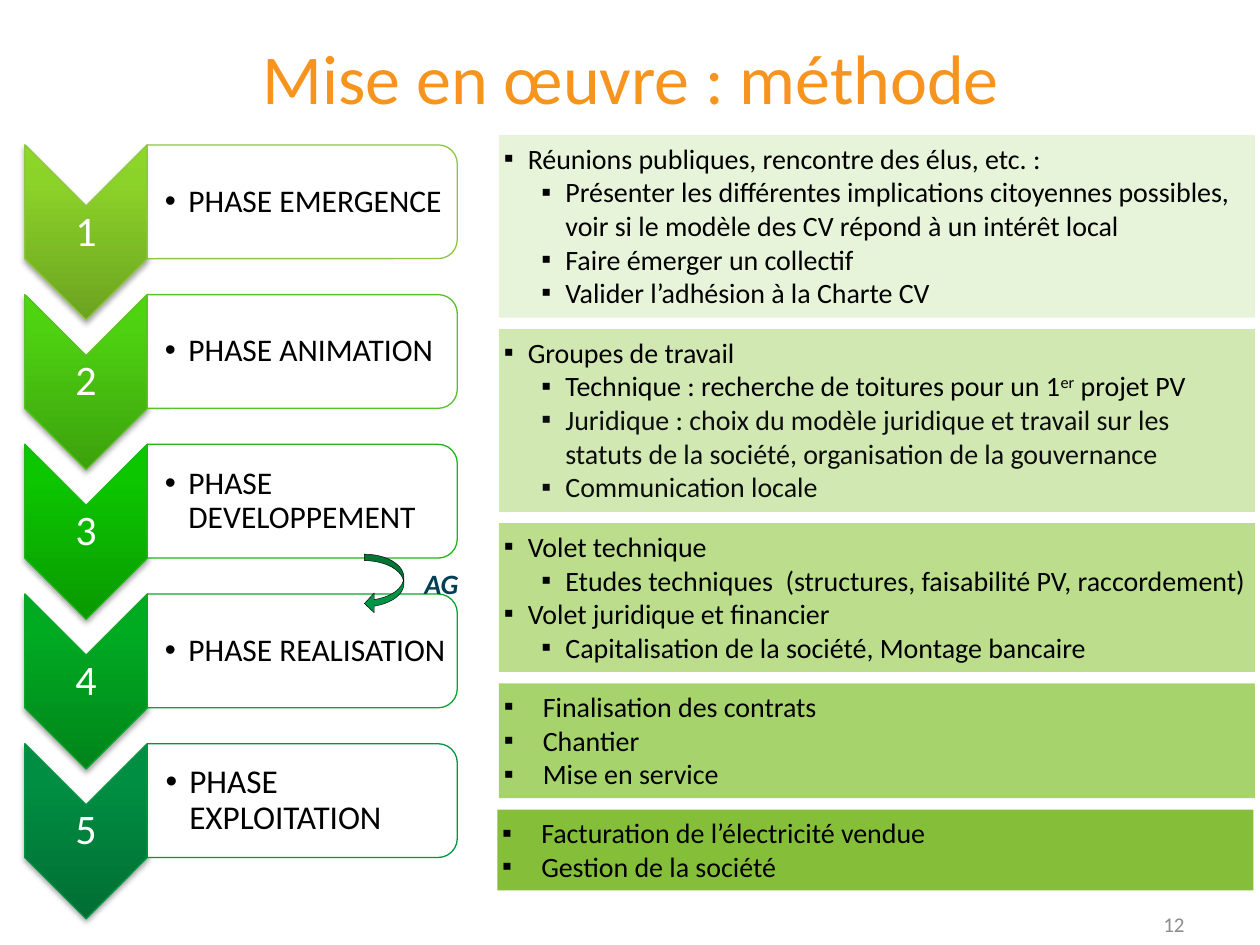
from lxml import etree
from pptx import Presentation
from pptx.dml.color import RGBColor
from pptx.enum.shapes import MSO_SHAPE as Kind
from pptx.enum.text import MSO_ANCHOR as Anchor, MSO_AUTO_SIZE as Fit, PP_ALIGN as Align
from pptx.oxml import parse_xml
from pptx.oxml.ns import qn
from pptx.util import Pt

NS = 'xmlns:a="http://schemas.openxmlformats.org/drawingml/2006/main"'

# Number colour line, gradient from dark to light, label, label size
PHASES = [
    ("8DC63F", ("6CA320", "8CD329", "8DD826"), "PHASE EMERGENCE", 18),
    ("59C128", ("3CA10D", "4ED111", "4DD60D"), "PHASE ANIMATION", 18),
    ("21B517", ("099900", "0CC600", "0CC700"), "PHASE DEVELOPPEMENT", 18),
    ("0AA629", ("00841A", "00AB22", "00AC22"), "PHASE REALISATION", 18),
    ("009444", ("006E33", "008F42", "009042"), "PHASE EXPLOITATION", 19),
]

# Left, fill, lines of text, first indent, items (level, text, colour)
BLACK, DARK = "000000", "0D0D0D"
PANELS = [
    (285.1, "E8F4D9", 5, 13.7, [
        (0, "Réunions publiques, rencontre des élus, etc. :", BLACK),
        (1, "Présenter les différentes implications citoyennes possibles, "
            "voir si le modèle des CV répond à un intérêt local", BLACK),
        (1, "Faire émerger un collectif", BLACK),
        (1, "Valider l’adhésion à la Charte CV", BLACK)]),
    (285.1, "D1E8B2", 5, 13.7, [
        (0, "Groupes de travail", BLACK),
        (1, "Technique : recherche de toitures pour un 1^er^ projet PV", BLACK),
        (1, "Juridique : choix du modèle juridique et travail sur les "
            "statuts de la société, organisation de la gouvernance", DARK),
        (1, "Communication locale", DARK)]),
    (285.1, "BBDD8C", 4, 13.7, [
        (0, "Volet technique", BLACK),
        (1, "Etudes techniques  (structures, faisabilité PV, raccordement)", BLACK),
        (0, "Volet juridique et financier", BLACK),
        (1, "Capitalisation de la société, Montage bancaire", BLACK)]),
    (285.1, "A6D36B", 3, 22.3, [
        (0, "Finalisation des contrats", BLACK),
        (0, "Chantier", BLACK),
        (0, "Mise en service", BLACK)]),
    (284.2, "85BE38", 2, 22.3, [
        (0, "Facturation de l’électricité vendue", BLACK),
        (0, "Gestion de la société", BLACK)]),
]


def rgb(code):
    return RGBColor.from_string(code)


class Deck:
    font = "Calibri"

    def __init__(self, wide, high):
        self.prs = Presentation()
        self.prs.slide_width, self.prs.slide_height = Pt(wide), Pt(high)
        self.slide = self.prs.slides.add_slide(self.prs.slide_layouts[5])

    def style(self, par, size, color, bold=False, italic=False):
        for run in par.runs:
            font = run.font
            font.name, font.size = self.font, Pt(size)
            font.bold, font.italic = bold, italic
            font.color.rgb = rgb(color)

    def title(self, text, box, size, color):
        shape = self.slide.shapes.title
        shape.left, shape.top, shape.width, shape.height = map(Pt, box)
        frame = shape.text_frame
        frame.text = text
        frame.vertical_anchor = Anchor.MIDDLE
        frame.paragraphs[0].alignment = Align.CENTER
        self.style(frame.paragraphs[0], size, color)

    def shape(self, kind, box, fill=None, line=None, width=0.75, turn=0):
        shape = self.slide.shapes.add_shape(kind, *map(Pt, box))
        shape.shadow.inherit = False
        shape.rotation = turn
        if fill:
            shape.fill.solid()
            shape.fill.fore_color.rgb = rgb(fill)
        if line:
            shape.line.color.rgb = rgb(line)
            shape.line.width = Pt(width)
        else:
            shape.line.fill.background()
        return shape

    def fade(self, shape, percent):
        color = shape.fill._xPr.find(qn("a:solidFill"))[0]
        etree.SubElement(color, qn("a:alpha")).set("val", str(percent * 1000))

    def shade(self, shape, colors):
        """Vertical gradient, dark at the bottom, with a soft shadow."""
        stops = "".join(
            f'<a:gs pos="{pos}000"><a:srgbClr val="{color}"/></a:gs>'
            for pos, color in zip((0, 80, 100), colors))
        props = shape._element.spPr
        props.find(qn("a:prstGeom")).addnext(parse_xml(
            f'<a:gradFill {NS} rotWithShape="0"><a:gsLst>{stops}</a:gsLst>'
            '<a:lin ang="16200000" scaled="0"/></a:gradFill>'))
        props.find(qn("a:effectLst")).append(parse_xml(
            f'<a:outerShdw {NS} blurRad="{Pt(3.1)}" dist="{Pt(1.8)}" dir="5400000" '
            'rotWithShape="0"><a:srgbClr val="000000"><a:alpha val="35000"/>'
            '</a:srgbClr></a:outerShdw>'))

    def pad(self, frame, left, top, right, low):
        frame.margin_left, frame.margin_top = Pt(left), Pt(top)
        frame.margin_right, frame.margin_bottom = Pt(right), Pt(low)

    def text(self, text, box, size, color, align=Align.LEFT,
             anchor=Anchor.MIDDLE, pads=(7.2, 3.6, 7.2, 3.6), **face):
        frame = self.slide.shapes.add_textbox(*map(Pt, box)).text_frame
        frame.word_wrap = True
        frame.vertical_anchor = anchor
        self.pad(frame, *pads)
        frame.text = text
        par = frame.paragraphs[0]
        par.alignment = align
        self.style(par, size, color, **face)
        return par

    def bullet(self, par, sign, left, hang, level=0):
        par.level = level
        props = par._p.get_or_add_pPr()
        props.set("marL", str(Pt(left)))
        props.set("indent", str(-Pt(hang)))
        etree.SubElement(props, qn("a:buFont")).set("typeface", "Arial")
        etree.SubElement(props, qn("a:buChar")).set("char", sign)

    def panel(self, box, fill, first, items):
        frame = self.shape(Kind.RECTANGLE, box, fill).text_frame
        frame.word_wrap = True
        frame.auto_size = Fit.SHAPE_TO_FIT_TEXT
        frame.vertical_anchor = Anchor.TOP
        self.pad(frame, 2.8, 3.6, 2.8, 3.6)
        for i, (level, text, color) in enumerate(items):
            par = frame.add_paragraph() if i else frame.paragraphs[0]
            par.alignment = Align.LEFT
            self.bullet(par, "▪", 35.2 if level else first,
                        13.7 if level else first, level)
            # Parts between carets are raised
            for j, part in enumerate(text.split("^")):
                run = par.add_run()
                run.text = part
                if j % 2:
                    run._r.get_or_add_rPr().set("baseline", "30000")
            self.style(par, 16, color)


def main():
    deck = Deck(720, 540)
    deck.title("Mise en œuvre : méthode", (36.5, 15, 648, 57), 40, "F7941E")

    # Phases: numbered chevron and label box, one row each
    pitch = 85.55
    for i, (line, colors, label, size) in enumerate(PHASES):
        drop = i * pitch
        arrow = deck.shape(Kind.CHEVRON, (-0.9, 97.8 + drop, 100.1, 70),
                           line=line, turn=90)
        deck.shade(arrow, colors)
        deck.text(str(i + 1), (14.1, 117.9 + drop, 70, 30), 24, "FFFFFF",
                  Align.CENTER, pads=(1.2,) * 4).line_spacing = 0.9
        card = deck.shape(Kind.ROUND_2_SAME_RECTANGLE,
                          (140.2, 26.7 + drop, 65, 177.2), "FFFFFF", line, turn=90)
        deck.fade(card, 90)
        par = deck.text(label, (84.1, 86.1 + drop, 174.1, 58.7), size, BLACK,
                        pads=(size * 0.56, 0.9, 0.9, 0.9))
        par.line_spacing = 0.9
        deck.bullet(par, "•", 13.5, 13.5, 1)

    # Detail panels, stacked with an equal gap
    top = 77.2
    for left, fill, lines, first, items in PANELS:
        high = 7.4 + 19.4 * lines
        deck.panel((left, top, 432, high), fill, first, items)
        top += high + 6.5

    # Assembly step between phases 3 and 4
    turn = deck.shape(Kind.CURVED_LEFT_ARROW, (208.2, 316.7, 22.6, 33.9),
                      "009444", BLACK, 0.25)
    for i, value in enumerate((0.164, 0.5, 0.25)):
        turn.adjustments[i] = value
    deck.text("AG", (235.4, 320.4, 51.8, 26.6), 16, "003F54",
              anchor=Anchor.TOP, bold=True, italic=True)

    # Page number
    deck.text("12", (516, 513.5, 168, 28.8), 12, "8C8C8C", Align.RIGHT)
    deck.prs.save("out.pptx")


if __name__ == "__main__":
    main()
